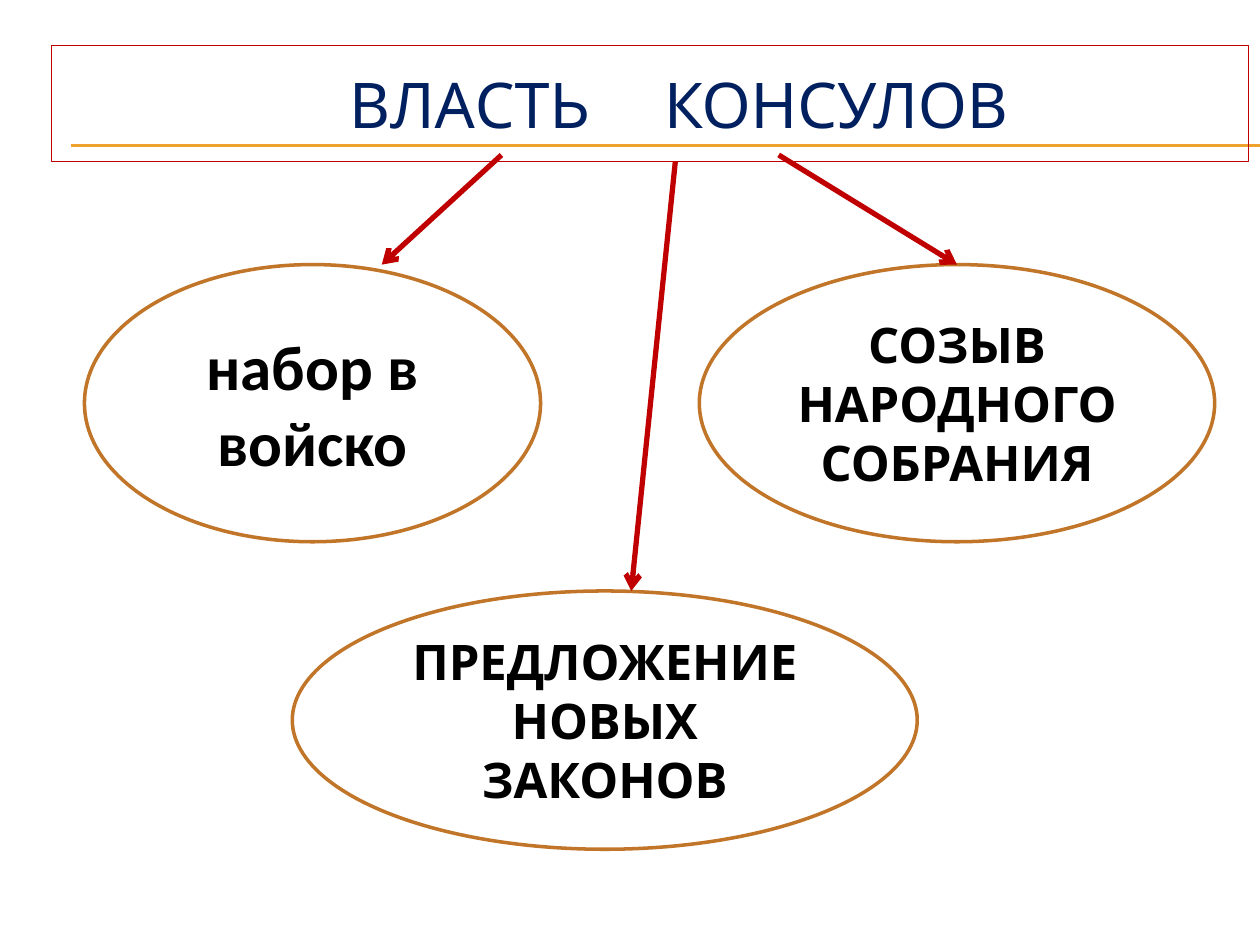
from lxml import etree
from pptx import Presentation
from pptx import util as u
from pptx.dml.color import RGBColor
from pptx.enum import shapes, text
from pptx.oxml.ns import qn

HUES = {"gold": "F0A22E", "red": "C00000", "navy": "002060",
        "brown": "C17529", "white": "FFFFFF", "black": "000000"}


class Deck:
    def __init__(self, slide, font):
        self.slide = slide
        self.font = font

    def hue(self, name):
        return RGBColor.from_string(HUES[name])

    def stroke(self, item, hue, width):
        item.line.color.rgb = self.hue(hue)
        item.line.width = u.Pt(width)

    def box(self, kind, place, hue, width, fill=None):
        item = self.slide.shapes.add_shape(kind, *map(u.Inches, place))
        item.shadow.inherit = False
        if fill:
            item.fill.solid()
            item.fill.fore_color.rgb = self.hue(fill)
        else:
            item.fill.background()
        self.stroke(item, hue, width)
        return item

    def label(self, item, paras, size, hue, bold=False, font=None):
        frame = item.text_frame
        frame.word_wrap = True
        frame.vertical_anchor = text.MSO_ANCHOR.MIDDLE
        for i, runs in enumerate(paras):
            para = frame.paragraphs[0] if i == 0 else frame.add_paragraph()
            para.alignment = text.PP_ALIGN.CENTER
            for words, gap in runs:
                run = para.add_run()
                run.text = words
                run.font.name = font or self.font
                run.font.size = u.Pt(size)
                run.font.bold = bold
                run.font.color.rgb = self.hue(hue)
                if gap:
                    run.font._element.set("spc", str(gap * 100))

    def title(self, place, runs, shift):
        item = self.box(shapes.MSO_SHAPE.RECTANGLE, place, "red", 0.75)
        item.text_frame.margin_left = u.Inches(shift)
        self.label(item, [runs], 36, "navy")

    def oval(self, place, paras, size, font=None):
        item = self.box(shapes.MSO_SHAPE.OVAL, place, "brown", 2, "white")
        self.label(item, paras, size, "black", True, font)
        return item

    def line(self, start, end, hue, width):
        item = self.slide.shapes.add_connector(
            shapes.MSO_CONNECTOR.STRAIGHT, *map(u.Inches, start + end))
        self.stroke(item, hue, width)
        etree.SubElement(item._element.spPr, qn("a:effectLst"))
        return item

    def arrow(self, start, end):
        item = self.line(start, end, "red", 3)
        etree.SubElement(item.line._get_or_add_ln(), qn("a:tailEnd"), type="arrow")
        return item


def main():
    prs = Presentation()
    prs.slide_width, prs.slide_height = u.Inches(10), u.Inches(7.5)
    deck = Deck(prs.slides.add_slide(prs.slide_layouts[6]), "Cabin")

    for y in (1.15, 1.16):
        deck.line((0.56, y), (10, y), "gold", 0.75)
    deck.title((0.41, 0.36, 9.5, 0.92),
               [("ВЛАСТЬ", 0), (" ", 34), ("КОНСУЛОВ", 0)], 0.55)

    deck.oval((0.67, 2.1, 3.62, 2.2), [[("набор в войско", 0)]], 36, "Calibri")
    call = deck.oval((5.55, 2.1, 4.09, 2.2),
                     [[("СОЗЫВ НАРОДНОГО СОБРАНИЯ", 0)]], 28)
    deck.oval((2.32, 4.69, 4.96, 2.05),
              [[("ПРЕДЛОЖЕНИЕ", 0)],
               [("НОВЫХ", 0), (" ", 29), ("ЗАКОНОВ", 0)]], 28)

    deck.arrow((3.98, 1.23), (3.03, 2.1))
    deck.arrow((6.18, 1.23), (7.6, 2.1)).end_connect(call, 0)
    deck.arrow((5.36, 1.28), (5.01, 4.69))
    prs.save("out.pptx")


if __name__ == "__main__":
    main()
